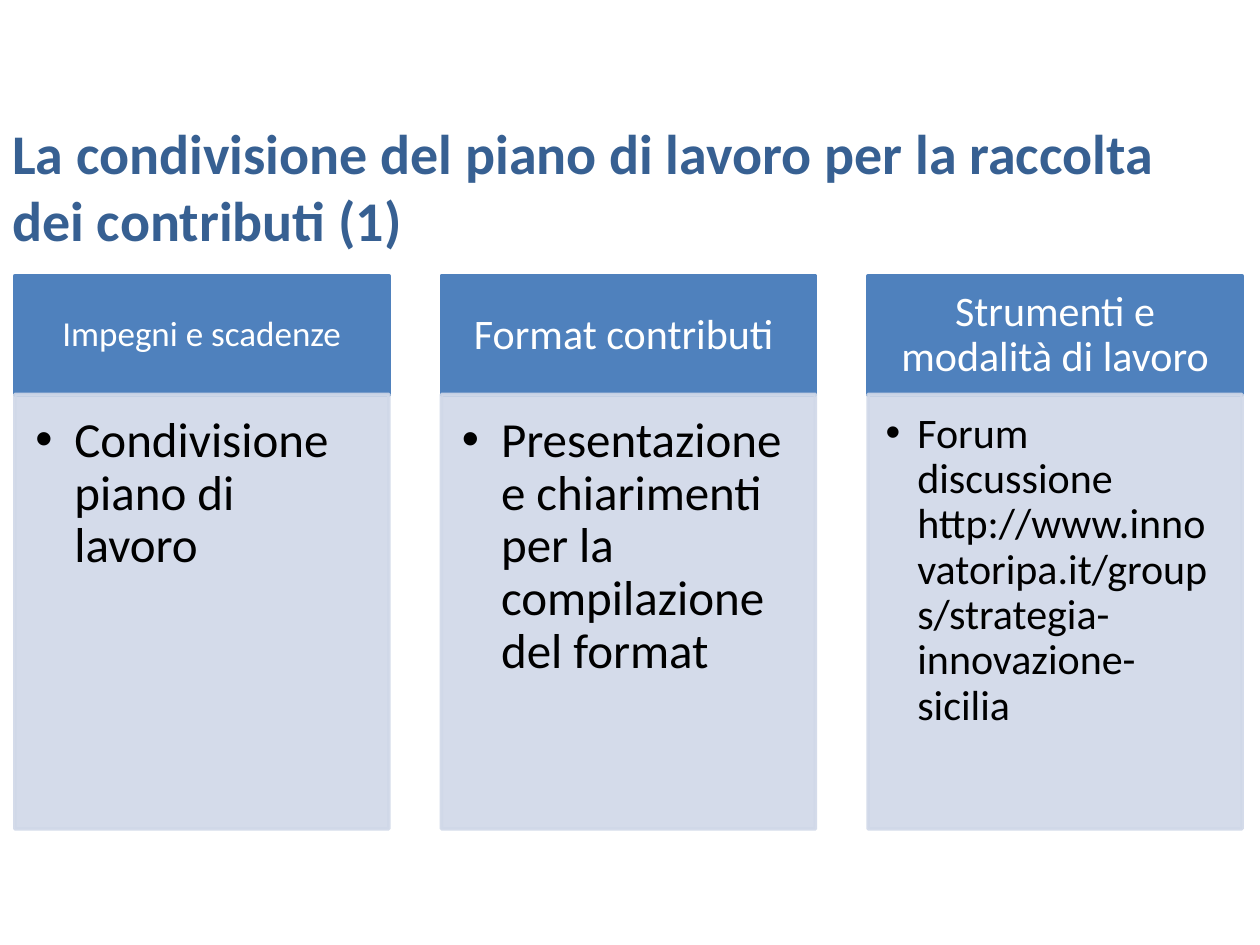
"""Build the slide on sharing the work plan for collecting contributions."""
from dataclasses import dataclass

from lxml.etree import SubElement
from pptx import Presentation
from pptx.dml.color import RGBColor
from pptx.enum.shapes import MSO_SHAPE
from pptx.enum.text import MSO_ANCHOR, PP_ALIGN
from pptx.oxml.ns import qn
from pptx.util import Cm, Pt

FONT = "Calibri"
TITLE_COLOR = "376092"
HEADER_COLOR = "4F81BD"
BODY_COLOR = "D0D8E8"
LEFT, PITCH, WIDTH = 0.3, 8.6, 7.54
HEADER_TOP, HEADER_HEIGHT = 5.56, 2.41
BODY_TOP, BODY_HEIGHT = 7.95, 8.76


@dataclass
class Column:
    heading: str
    heading_size: int
    bullet: str
    bullet_size: int
    indent: float


COLUMNS = [
    Column("Impegni e scadenze", 20, "Condivisione piano di lavoro", 28, 0.79),
    Column("Format contributi ", 24,
           "Presentazione e chiarimenti per la compilazione del format", 28, 0.79),
    Column("Strumenti e modalità di lavoro", 24,
           "Forum discussione http://www.innovatoripa.it/groups/"
           "strategia-innovazione-sicilia", 24, 0.64),
]


def color(value: str) -> RGBColor:
    return RGBColor.from_string(value)


def style_text(paragraph, size: int, value: str, bold: bool = False) -> None:
    for run in paragraph.runs:
        run.font.name = FONT
        run.font.size = Pt(size)
        run.font.bold = bold
        run.font.color.rgb = color(value)


def set_insets(text_frame, left: float, top: float, right: float, bottom: float) -> None:
    text_frame.margin_left, text_frame.margin_top = Cm(left), Cm(top)
    text_frame.margin_right, text_frame.margin_bottom = Cm(right), Cm(bottom)


def add_panel(slide, left: float, top: float, height: float, fill: str, text: str):
    shape = slide.shapes.add_shape(
        MSO_SHAPE.RECTANGLE, Cm(left), Cm(top), Cm(WIDTH), Cm(height))
    shape.shadow.inherit = False
    shape.fill.solid()
    shape.fill.fore_color.rgb = color(fill)
    shape.line.color.rgb = color(fill)
    shape.line.width = Pt(2)
    shape.text_frame.word_wrap = True
    shape.text_frame.text = text
    shape.text_frame.paragraphs[0].line_spacing = 0.9
    return shape


def add_header(slide, left: float, column: Column) -> None:
    shape = add_panel(slide, left, HEADER_TOP, HEADER_HEIGHT, HEADER_COLOR, column.heading)
    text_frame = shape.text_frame
    text_frame.vertical_anchor = MSO_ANCHOR.MIDDLE
    size = column.heading_size
    set_insets(text_frame, size / 50, size / 86, size / 50, size / 86)
    paragraph = text_frame.paragraphs[0]
    paragraph.alignment = PP_ALIGN.CENTER
    style_text(paragraph, size, "FFFFFF")


def add_body(slide, left: float, column: Column) -> None:
    shape = add_panel(slide, left, BODY_TOP, BODY_HEIGHT, BODY_COLOR, column.bullet)
    for color_element in shape._element.spPr.iter(qn("a:srgbClr")):
        SubElement(color_element, qn("a:alpha"), val="90000")
    text_frame = shape.text_frame
    text_frame.vertical_anchor = MSO_ANCHOR.TOP
    size = column.bullet_size
    set_insets(text_frame, size / 68, size / 68, size / 50, size / 46)
    paragraph = text_frame.paragraphs[0]
    paragraph.alignment = PP_ALIGN.LEFT
    paragraph.level = 1
    properties = paragraph._p.get_or_add_pPr()
    properties.set("marL", str(Cm(column.indent)))
    properties.set("indent", str(-Cm(column.indent)))
    SubElement(properties, qn("a:buFont"), typeface="Arial")
    SubElement(properties, qn("a:buChar"), char="•")
    style_text(paragraph, size, "000000")


def add_title(slide, text: str) -> None:
    text_box = slide.shapes.add_textbox(Cm(0), Cm(2.26), Cm(25.1), Cm(4.37))
    text_box.text_frame.word_wrap = True
    text_box.text_frame.text = text
    style_text(text_box.text_frame.paragraphs[0], 32, TITLE_COLOR, bold=True)


def main() -> None:
    presentation = Presentation()
    presentation.slide_width, presentation.slide_height = Cm(25.4), Cm(19.05)
    slide = presentation.slides.add_slide(presentation.slide_layouts[6])
    add_title(slide, "La condivisione del piano di lavoro per la raccolta dei contributi (1)")
    for index, column in enumerate(COLUMNS):
        left = LEFT + index * PITCH
        add_header(slide, left, column)
        add_body(slide, left, column)
    presentation.save("out.pptx")


if __name__ == "__main__":
    main()
